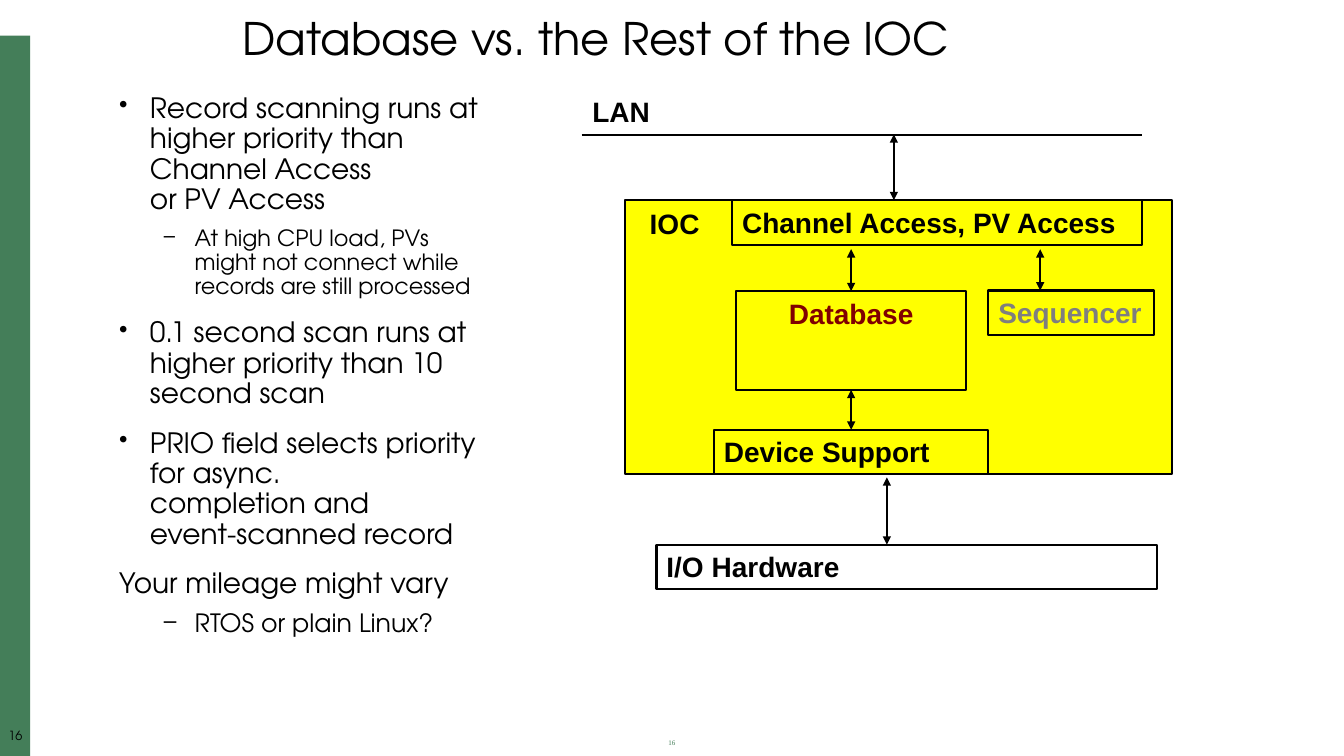
"""Build a slide that sets the database against the rest of the IOC."""
from pptx import Presentation
from pptx import util as u
from pptx.dml.color import RGBColor
from pptx.enum import shapes, text
from pptx.oxml import ns
from lxml import etree

COLORS = {
    "ink": "000000", "bar": "447E59", "ioc": "FFFF00",
    "database": "800000", "sequencer": "7F7F7F",
}
LEFT, CENTER = text.PP_ALIGN.LEFT, text.PP_ALIGN.CENTER
TOP, MIDDLE = text.MSO_ANCHOR.TOP, text.MSO_ANCHOR.MIDDLE


def color(name):
    """Return the named colour."""
    return RGBColor.from_string(COLORS[name])


def add_child(parent, tag, **attributes):
    """Append a drawing element and return it."""
    return etree.SubElement(parent, ns.qn(tag), attributes)


def write(frame, words, size=20, font="TeX Gyre Adventor", ink="ink", bold=False,
          align=LEFT, spacing=0.9, before=0, bullet=None, margin=0, first=True):
    """Write one paragraph into a text frame."""
    para = frame.paragraphs[0] if first else frame.add_paragraph()
    para.text = words
    para.alignment = align
    para.line_spacing = spacing
    para.space_before = u.Pt(before)
    if bullet:
        properties = para._p.get_or_add_pPr()
        properties.set("marL", str(u.Pt(margin)))
        properties.set("indent", str(u.Pt(-22)))
        tint = add_child(properties, "a:buClr")
        add_child(tint, "a:srgbClr", val=COLORS["ink"])
        add_child(properties, "a:buSzPct", val="90000")
        add_child(properties, "a:buChar", char=bullet)
    for span in para.runs:
        span.font.size = u.Pt(size)
        span.font.name = font
        span.font.bold = bold
        span.font.color.rgb = color(ink)


class Page:
    """Holds the diagram style and the current slide."""

    line_width = 1.5
    label = {"font": "Arial", "bold": True, "spacing": 1}

    def __init__(self, deck):
        """Add a title-only slide."""
        self.slide = deck.slides.add_slide(deck.slide_layouts[5])

    def title(self, words, left, top, width, height):
        """Place and format the title placeholder."""
        box = self.slide.shapes.title
        box.left, box.top, box.width, box.height = map(u.Pt, (left, top, width, height))
        box.text_frame.auto_size = text.MSO_AUTO_SIZE.NONE
        box.text_frame.vertical_anchor = MIDDLE
        write(box.text_frame, words, size=32)

    def text(self, left, top, width, height, inset=True, wrap=True):
        """Add a text box and return its frame."""
        box = self.slide.shapes.add_textbox(*map(u.Pt, (left, top, width, height)))
        frame = box.text_frame
        frame.word_wrap = wrap
        if not inset:
            frame.margin_left = frame.margin_right = 0
            frame.margin_top = frame.margin_bottom = 0
        return frame

    def box(self, left, top, width, height, words="", fill=None, outline=True, **style):
        """Add a rectangle, labelled if words are given."""
        box = self.slide.shapes.add_shape(
            shapes.MSO_SHAPE.RECTANGLE, *map(u.Pt, (left, top, width, height)))
        box.shadow.inherit = False
        if fill:
            box.fill.solid()
            box.fill.fore_color.rgb = color(fill)
        else:
            box.fill.background()
        if outline:
            box.line.color.rgb = color("ink")
            box.line.width = u.Pt(self.line_width)
        else:
            box.line.fill.background()
        if words:
            box.text_frame.word_wrap = True
            box.text_frame.vertical_anchor = TOP
            write(box.text_frame, words, **{**self.label, **style})
        return box

    def line(self, left, top, right, bottom):
        """Add a straight line."""
        line = self.slide.shapes.add_connector(
            shapes.MSO_CONNECTOR.STRAIGHT, *map(u.Pt, (left, top, right, bottom)))
        line.line.color.rgb = color("ink")
        line.line.width = u.Pt(self.line_width)
        add_child(line._element.spPr, "a:effectLst")
        return line

    def arrow(self, x, top, bottom, above=None, below=None):
        """Add a vertical two-headed arrow, joined to the given boxes."""
        arrow = self.line(x, top, x, bottom)
        outline = arrow._element.spPr.find(ns.qn("a:ln"))
        for end in ("a:headEnd", "a:tailEnd"):
            add_child(outline, end, type="triangle")
        if above:
            arrow.begin_connect(above, 2)
        if below:
            arrow.end_connect(below, 0)


def add_points(page):
    """Write the bulleted text on the left."""
    point = {"bullet": "•", "margin": 22, "before": 14}
    detail = {"bullet": "–", "margin": 54, "before": 8}
    frame = page.text(78, 64, 281, 476)
    lines = [
        ("Record scanning runs at higher priority than Channel Access\vor PV Access",
         {**point, "before": 0}),
        ("At high CPU load, PVs might not connect while records are still processed",
         {**detail, "size": 16}),
        ("0.1 second scan runs at higher priority than 10 second scan", point),
        ("PRIO field selects priority for async.\vcompletion and\vevent-scanned record", point),
        ("Your mileage might vary", {"before": 14}),
        ("RTOS or plain Linux?", {**detail, "size": 18}),
    ]
    for index, (words, style) in enumerate(lines):
        write(frame, words, first=index == 0, **style)


def add_diagram(page):
    """Draw the IOC between the network and the hardware."""
    page.line(415.5, 96.5, 816, 96.5)
    write(page.text(416, 64, 56, 32, wrap=False), "LAN", **page.label)
    page.box(446.5, 143, 390.5, 195.5, fill="ioc")
    write(page.text(457, 144, 61, 32), "IOC", **page.label)
    page.box(523, 143, 293, 32, "Channel Access, PV Access")
    database = page.box(526, 208, 164, 70.5, "Database", ink="database", align=CENTER)
    page.box(706, 207.5, 118, 32, "Sequencer", ink="sequencer")
    support = page.box(510, 307, 196, 31.5, "Device Support")
    page.box(469, 389, 357.5, 31.5, "I/O Hardware")
    page.arrow(638.5, 96, 143)
    page.arrow(608, 178, 208, below=database)
    page.arrow(743, 178, 207.5)
    page.arrow(608, 278.5, 307, above=database, below=support)
    page.arrow(633.5, 341, 389)


def main():
    """Build and save the deck."""
    deck = Presentation()
    deck.slide_width, deck.slide_height = u.Pt(960), u.Pt(540)
    page = Page(deck)
    page.box(0, 25.5, 21.5, 514.5, fill="bar", outline=False)
    write(page.text(0, 521.5, 22, 12, inset=False), "16", size=9, align=CENTER)
    write(page.text(366, 525, 228, 14), "16", size=5, font="Times New Roman",
          ink="bar", align=CENTER)
    page.title("Database vs. the Rest of the IOC", 166, 8, 691, 42)
    add_diagram(page)
    add_points(page)
    deck.save("out.pptx")


if __name__ == "__main__":
    main()
